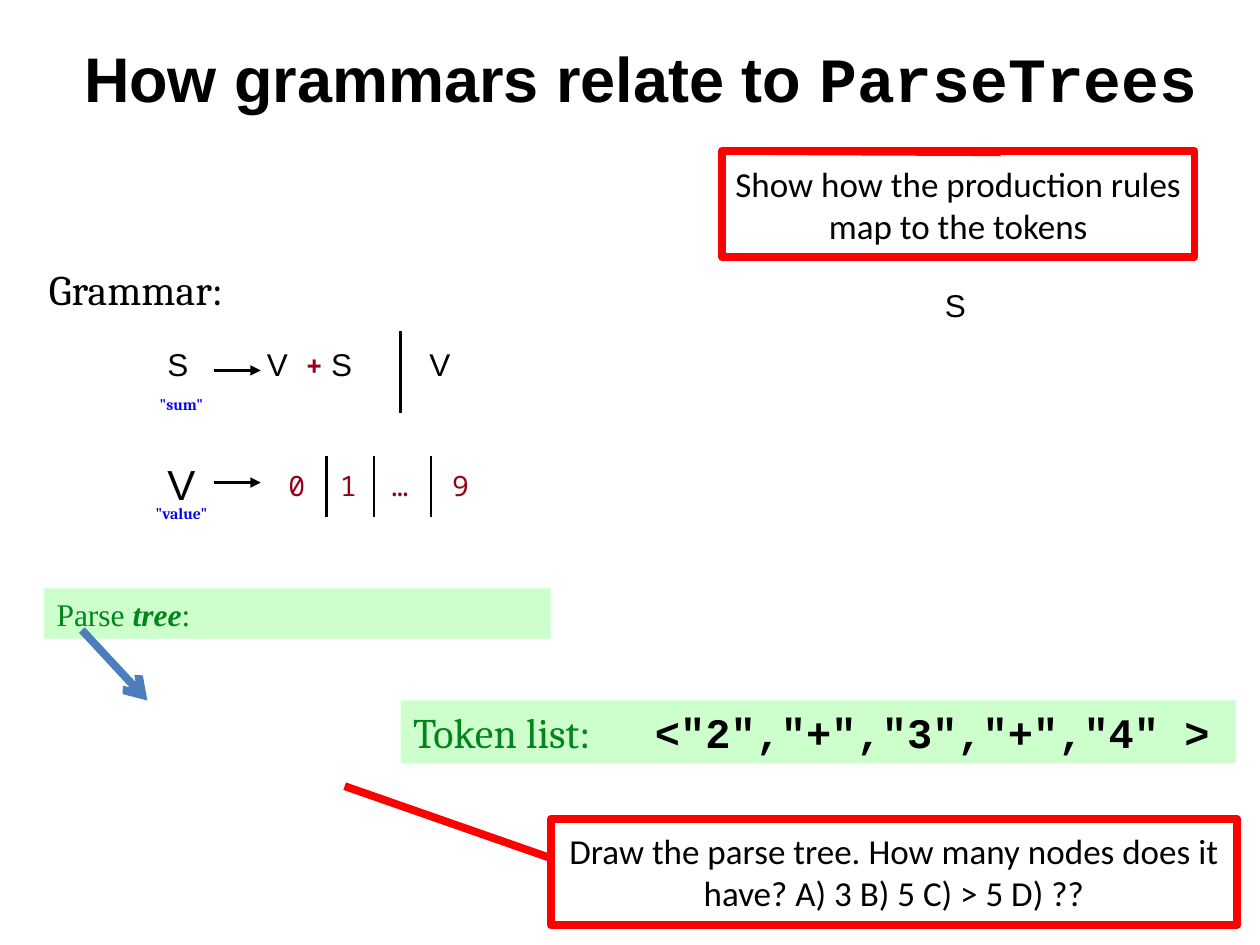
from dataclasses import dataclass

from lxml.etree import SubElement
from pptx import Presentation
from pptx.dml.color import RGBColor
from pptx.enum.shapes import MSO_CONNECTOR, MSO_SHAPE
from pptx.enum.text import MSO_ANCHOR, MSO_AUTO_SIZE, PP_ALIGN
from pptx.oxml.ns import qn
from pptx.util import Inches, Pt

COLUMNS, ROWS = 100, 75
COLORS = {
    "black": "000000", "white": "FFFFFF", "token": "960117", "label": "0703F3",
    "green": "04841C", "pale green": "CCFFCC", "red": "FF0000", "blue": "4B7EBC",
}

presentation = Presentation()
presentation.slide_width, presentation.slide_height = Inches(10), Inches(7.5)
COLUMN = presentation.slide_width / COLUMNS
ROW = presentation.slide_height / ROWS
slide = presentation.slides.add_slide(presentation.slide_layouts[5])


@dataclass
class Area:
    """Place on the slide, in grid columns and rows."""
    column: float
    row: float
    columns: float
    rows: float

    def box(self) -> tuple[int, int, int, int]:
        return (round(self.column * COLUMN), round(self.row * ROW),
                round(self.columns * COLUMN), round(self.rows * ROW))


@dataclass
class Style:
    font: str
    size: float
    color: str = "black"
    bold: bool = False
    italic: bool = False


@dataclass
class Line:
    start: tuple[float, float]
    end: tuple[float, float]
    color: str = "black"
    width: float = 1.5
    arrowhead: str = ""


@dataclass
class Callout:
    area: Area
    text: str
    adjustments: tuple[float, ...]


Pieces = list[tuple[str, Style]]


def rgb(name: str) -> RGBColor:
    return RGBColor.from_string(COLORS[name])


def write(shape, pieces: Pieces, align=PP_ALIGN.LEFT, anchor=MSO_ANCHOR.TOP, wrap=True):
    """Fill the shape with one paragraph of differently styled runs."""
    frame = shape.text_frame
    frame.word_wrap = wrap
    frame.auto_size = MSO_AUTO_SIZE.NONE
    frame.vertical_anchor = anchor
    paragraph = frame.paragraphs[0]
    paragraph.alignment = align
    for text, style in pieces:
        run = paragraph.add_run()
        run.text = text
        run.font.name, run.font.size = style.font, Pt(style.size)
        run.font.bold, run.font.italic = style.bold, style.italic
        run.font.color.rgb = rgb(style.color)
    return paragraph


def add_text(area: Area, text: str, style: Style, align=PP_ALIGN.LEFT):
    return write(slide.shapes.add_textbox(*area.box()), [(text, style)], align, wrap=False)


def add_band(area: Area, pieces: Pieces):
    band = slide.shapes.add_shape(MSO_SHAPE.RECTANGLE, *area.box())
    band.shadow.inherit = False
    band.fill.solid()
    band.fill.fore_color.rgb = rgb("pale green")
    band.line.fill.background()
    return write(band, pieces)


def add_line(line: Line) -> None:
    ends = [round(value * unit) for point in (line.start, line.end)
            for value, unit in zip(point, (COLUMN, ROW))]
    connector = slide.shapes.add_connector(MSO_CONNECTOR.STRAIGHT, *ends)
    connector.line.color.rgb = rgb(line.color)
    connector.line.width = Pt(line.width)
    if line.arrowhead:
        SubElement(connector.line._get_or_add_ln(), qn("a:tailEnd"), type=line.arrowhead)
    SubElement(connector._element.spPr, qn("a:effectLst"))


def add_callout(callout: Callout) -> None:
    shape = slide.shapes.add_shape(MSO_SHAPE.LINE_CALLOUT_1, *callout.area.box())
    for index, value in enumerate(callout.adjustments):
        shape.adjustments[index] = value
    shape.shadow.inherit = False
    shape.fill.solid()
    shape.fill.fore_color.rgb = rgb("white")
    shape.line.color.rgb = rgb("red")
    shape.line.width = Pt(4.5)
    write(shape, [(callout.text, Style("Calibri", 20))], PP_ALIGN.CENTER, MSO_ANCHOR.MIDDLE)


title = slide.shapes.title
title.left, title.top, title.width, title.height = Area(1.7, 2.6, 98.3, 7.1).box()
write(title, [("How grammars relate to ", Style("Arial", 36, bold=True)),
              ("ParseTrees", Style("Courier New", 36, bold=True))], PP_ALIGN.CENTER)

# Grammar
add_text(Area(2.9, 20.4, 19.8, 5), "Grammar:", Style("Cambria", 24))
symbol = Style("Arial", 18)
for column, text in ((12.3, "S"), (20.2, "V"), (25.3, "S"), (33.1, "V")):
    add_text(Area(column, 26.9, 4.2, 4), text, symbol)
add_text(Area(12.3, 35.9, 4.2, 5), "V", Style("Arial", 24))
add_text(Area(23.3, 27.2, 3.4, 3.7), "+", Style("Noto Sans Mono", 16, "token", bold=True))
for column, text in ((21.9, "0"), (26, "1"), (30.1, "…"), (34.9, "9")):
    add_text(Area(column, 36.7, 3.4, 3.7), text, Style("Noto Sans Mono", 16, "token"))
for row, text in ((31.1, '"sum"'), (39.8, '"value"')):
    label = add_text(Area(10.2, row, 8.4, 2.2), text,
                     Style("Cambria", 9, "label", bold=True), PP_ALIGN.CENTER)
    label.line_spacing = 0.8

for row in (29.4, 38.3):
    add_line(Line((17, row), (20.7, row), arrowhead="triangle"))
add_line(Line((31.8, 26.3), (31.8, 32.8)))
for column in (25.9, 29.7, 34.2):
    add_line(Line((column, 36.2), (column, 41)))

# Parse tree and tokens
tree_style = Style("Times New Roman", 18, "green")
add_band(Area(3.5, 46.7, 40.2, 4),
         [("Parse ", tree_style),
          ("tree", Style("Times New Roman", 18, "green", bold=True, italic=True)),
          (":", tree_style)])
add_line(Line((6.5, 50), (11.7, 55.6), "blue", 4.5, "arrow"))
tokens = add_band(Area(31.8, 55.6, 66.3, 5),
                  [("Token list:\t", Style("Cambria", 24, "green")),
                   ('<"2","+","3","+","4" >', Style("Courier New", 24, bold=True))])
tab_stops = SubElement(tokens._p.get_or_add_pPr(), qn("a:tabLst"))
SubElement(tab_stops, qn("a:tab"), pos=str(round(19.2 * COLUMN)), algn="l")
add_text(Area(74, 22.2, 4.2, 5), "S", symbol)

for callout in (
    Callout(Area(57.3, 12, 37.5, 8.4), "Show how the production rules map to the tokens",
            (0.01, 0.59, 0, 0.11)),
    Callout(Area(43.7, 65, 54.5, 8.4),
            "Draw the parse tree. How many nodes does it have? A) 3 B) 5 C) > 5 D) ??",
            (-0.31, -0.3, 0.37, 0)),
):
    add_callout(callout)

presentation.save("out.pptx")
